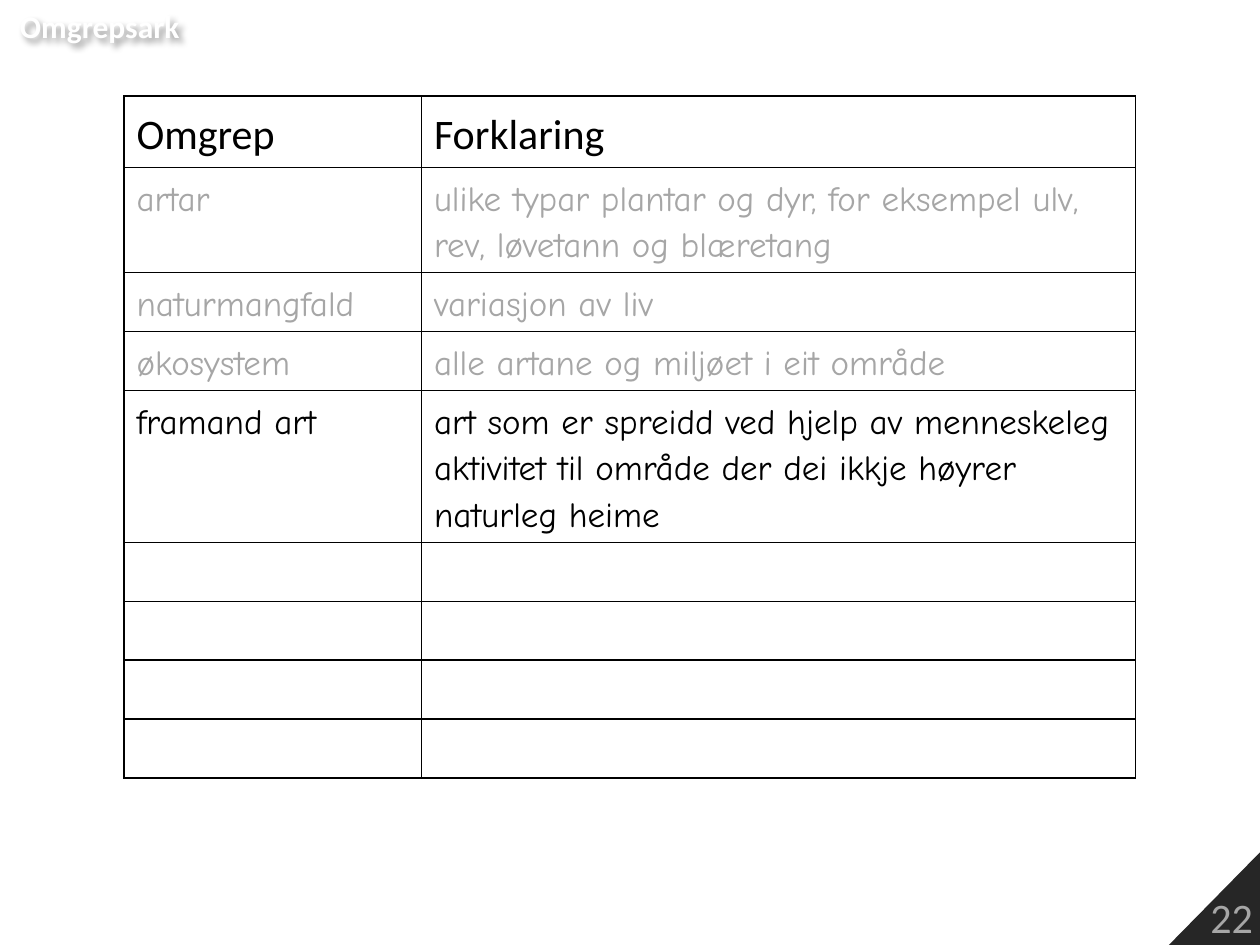
import pptx
import pptx.dml.color
import pptx.enum.text
import pptx.oxml
import pptx.oxml.ns
import pptx.util

Pt = pptx.util.Pt
ALIGN = pptx.enum.text.PP_ALIGN
ANCHOR = pptx.enum.text.MSO_ANCHOR

# Content
TITLE = "Omgrepsark"
PAGE_NUMBER = "22"
HEADINGS = ("Omgrep", "Forklaring")
EARLIER_TERMS = [
    ("artar", "ulike typar plantar og dyr, for eksempel ulv, rev, løvetann og blæretang"),
    ("naturmangfald", "variasjon av liv"),
    ("økosystem", "alle artane og miljøet i eit område"),
]
NEW_TERM = (
    "framand art",
    "art som er spreidd ved hjelp av menneskeleg aktivitet til område "
    "der dei ikkje høyrer naturleg heime",
)
EMPTY_ROWS = 4

BLACK, WHITE, GREY, DARK = "000000", "FFFFFF", "A6A6A6", "262626"
HEADING_FORMAT = dict(size=24, color=BLACK, spacing=1.15, anchor=ANCHOR.MIDDLE)
TERM_FORMAT = dict(size=20, font="Comic Neue", spacing=1.15)

# Layout in points
SLIDE_WIDTH, SLIDE_HEIGHT = 720, 540
TABLE_LEFT, TABLE_TOP = 70.8, 54.8
COLUMN_WIDTHS = (170, 408)
ROW_HEIGHT = 33.7
TALL_ROWS = {0: 40.6, 1: 60.2, 4: 86.6}


def rgb(color):
    return pptx.dml.color.RGBColor.from_string(color)


def write(frame, text, size, color, font="Calibri", bold=False,
          align=ALIGN.LEFT, anchor=ANCHOR.TOP, spacing=None):
    frame.vertical_anchor = anchor
    paragraph = frame.paragraphs[0]
    paragraph.alignment = align
    paragraph.line_spacing = spacing
    run = paragraph.add_run()
    run.text = text
    run.font.size = Pt(size)
    run.font.name = font
    run.font.bold = bold
    run.font.color.rgb = rgb(color)


def element(xml):
    return pptx.oxml.parse_xml(xml.replace(">", " " + pptx.oxml.ns.nsdecls("a") + ">", 1))


def draw_borders(cell):
    properties = cell._tc.get_or_add_tcPr()
    for index, side in enumerate("LRTB"):
        properties.insert(index, element(
            f'<a:ln{side} w="{Pt(1)}"><a:solidFill><a:srgbClr val="{BLACK}"/>'
            f'</a:solidFill></a:ln{side}>'))


presentation = pptx.Presentation()
presentation.slide_width = Pt(SLIDE_WIDTH)
presentation.slide_height = Pt(SLIDE_HEIGHT)
slide = presentation.slides.add_slide(presentation.slide_layouts[6])

# Page corner
right, bottom = 723, 542
outline = slide.shapes.build_freeform(Pt(666), Pt(bottom))
outline.add_line_segments([(Pt(right), Pt(484)), (Pt(right), Pt(bottom))], close=True)
corner = outline.convert_to_shape()
corner.shadow.inherit = False
corner.fill.solid()
corner.fill.fore_color.rgb = rgb(DARK)
corner.line.fill.background()
write(corner.text_frame, PAGE_NUMBER, size=24, color=GREY,
      align=ALIGN.RIGHT, anchor=ANCHOR.BOTTOM)

# Glossary table
rows = [(HEADINGS, HEADING_FORMAT)]
rows += [(term, dict(TERM_FORMAT, color=GREY)) for term in EARLIER_TERMS]
rows += [(NEW_TERM, dict(TERM_FORMAT, color=BLACK))]
rows += [(("", ""), None)] * EMPTY_ROWS
heights = [TALL_ROWS.get(index, ROW_HEIGHT) for index in range(len(rows))]

glossary = slide.shapes.add_table(
    len(rows), len(COLUMN_WIDTHS), Pt(TABLE_LEFT), Pt(TABLE_TOP),
    Pt(sum(COLUMN_WIDTHS)), Pt(sum(heights))).table
glossary.first_row = False
glossary.horz_banding = False
for column, width in zip(glossary.columns, COLUMN_WIDTHS):
    column.width = Pt(width)
for row, height, (texts, text_format) in zip(glossary.rows, heights, rows):
    row.height = Pt(height)
    for cell, text in zip(row.cells, texts):
        cell.fill.background()
        draw_borders(cell)
        if text:
            cell_format = dict(text_format)
            cell.vertical_anchor = cell_format.pop("anchor", ANCHOR.TOP)
            write(cell.text_frame, text, **cell_format)

# Title with a soft shadow
title = slide.shapes.add_textbox(Pt(4.3), Pt(0.7), Pt(106.5), Pt(29))
title.text_frame.word_wrap = False
title.text_frame.auto_size = pptx.enum.text.MSO_AUTO_SIZE.SHAPE_TO_FIT_TEXT
write(title.text_frame, TITLE, size=18, color=WHITE, bold=True)
title._element.spPr.append(element(
    f'<a:effectLst><a:outerShdw blurRad="{Pt(4)}" dist="{Pt(3)}" dir="2700000" algn="tl">'
    f'<a:srgbClr val="{BLACK}"><a:alpha val="40000"/></a:srgbClr>'
    '</a:outerShdw></a:effectLst>'))

presentation.save("out.pptx")
